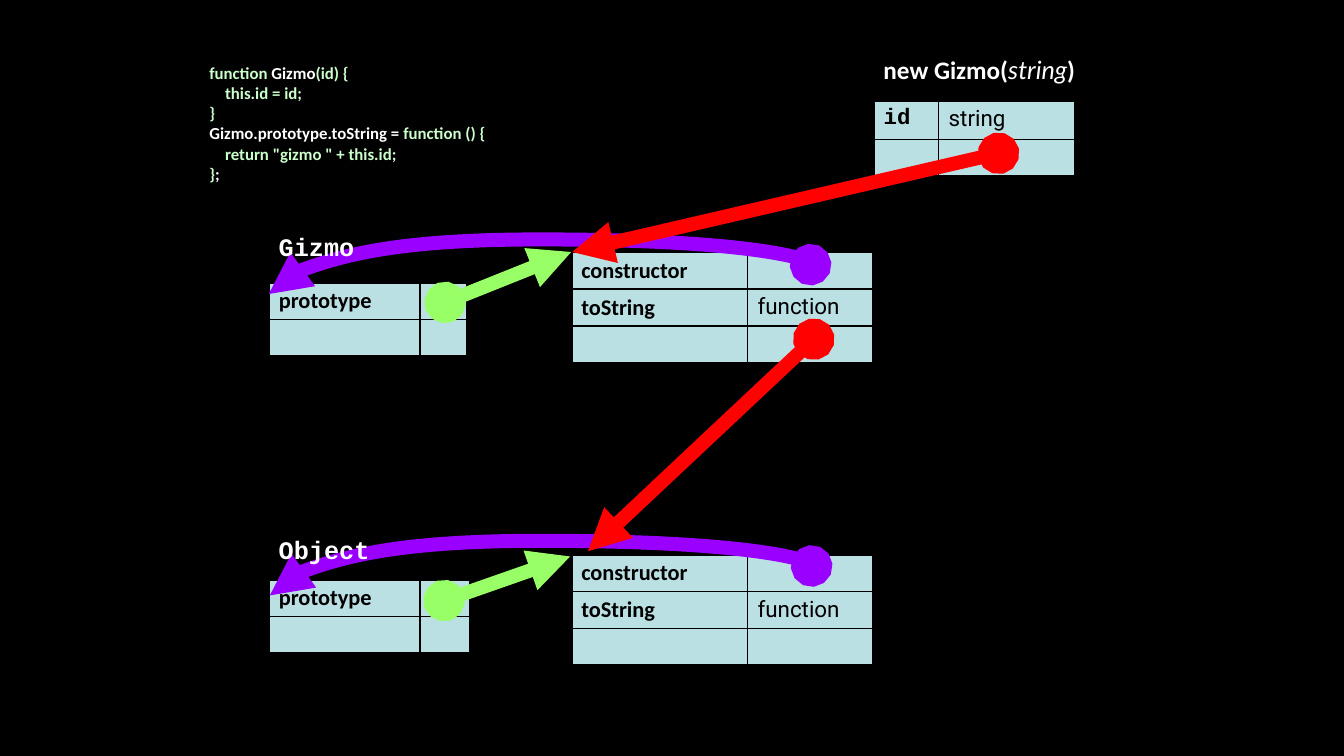
from dataclasses import dataclass

from lxml.etree import SubElement
from pptx import Presentation
from pptx.dml.color import RGBColor
from pptx.enum.shapes import MSO_CONNECTOR
from pptx.enum.text import MSO_AUTO_SIZE
from pptx.oxml.ns import qn
from pptx.slide import Slide
from pptx.table import _Cell
from pptx.text.text import TextFrame
from pptx.util import Emu, Pt

BLACK, WHITE, MINT, CELL_BLUE = "000000", "FFFFFF", "CCFFCC", "BBE0E3"
GREEN, PURPLE, RED = "99FF66", "9900FF", "FF0101"
BODY, MONO, VALUE, ITALIC = "Calibri", "Courier New", "Roboto", "Lato"


@dataclass(frozen=True)
class Record:
    left: int
    top: int
    columns: tuple[int, int]
    rows: tuple[tuple[str, str], ...]
    key_font: str = BODY
    first_height: int = 35


@dataclass(frozen=True)
class Run:
    text: str
    color: str = WHITE
    font: str = BODY
    italic: bool = False


@dataclass(frozen=True)
class Line:
    runs: tuple[Run, ...]
    indent: int = 0


@dataclass(frozen=True)
class Caption:
    left: int
    top: int
    width: int
    height: int
    size: int
    lines: tuple[Line, ...]
    wrap: bool = False


@dataclass(frozen=True)
class Pointer:
    start: tuple[int, int]
    end: tuple[int, int]
    color: str
    rise: int = 0


def px(length: float) -> Emu:
    return Emu(round(length * 9525))


def rgb(value: str) -> RGBColor:
    return RGBColor.from_string(value)


def add_border(cell: _Cell, side: str, width: float) -> None:
    properties = cell._tc.get_or_add_tcPr()
    edge = SubElement(properties, qn(f"a:ln{side}"), w=str(Pt(width)))
    fill = SubElement(edge, qn("a:solidFill"))
    SubElement(fill, qn("a:srgbClr"), val=BLACK)


def draw_record(slide: Slide, record: Record) -> None:
    heights = [record.first_height] + [35] * (len(record.rows) - 1)
    frame = slide.shapes.add_table(
        len(record.rows), 2, px(record.left), px(record.top),
        px(sum(record.columns)), px(sum(heights)))
    table = frame.table
    table.first_row = table.horz_banding = False
    for column, width in zip(table.columns, record.columns):
        column.width = px(width)
    last = len(heights) - 1
    for r, (height, texts) in enumerate(zip(heights, record.rows)):
        table.rows[r].height = px(height)
        for c, text in enumerate(texts):
            cell = table.cell(r, c)
            outer = {"L": c == 0, "R": c == 1, "T": r == 0, "B": r == last}
            for side, is_outer in outer.items():
                add_border(cell, side, 2.25 if is_outer else 1)
            cell.fill.solid()
            cell.fill.fore_color.rgb = rgb(CELL_BLUE)
            paragraph = cell.text_frame.paragraphs[0]
            paragraph.text = text
            paragraph.font.size = Pt(16)
            paragraph.font.name = VALUE if c else record.key_font
            paragraph.font.bold = c == 0
            paragraph.font.color.rgb = rgb(BLACK)
            if text:
                paragraph.space_before = Pt(3.2)


def write_line(frame: TextFrame, index: int, line: Line, size: int) -> None:
    paragraph = frame.add_paragraph() if index else frame.paragraphs[0]
    paragraph.font.size = Pt(size)
    if line.indent:
        paragraph._p.get_or_add_pPr().set("marL", str(px(line.indent)))
    for part in line.runs:
        run = paragraph.add_run()
        run.text = part.text
        run.font.name = part.font
        run.font.bold = not part.italic
        run.font.italic = part.italic
        run.font.color.rgb = rgb(part.color)


def draw_caption(slide: Slide, caption: Caption) -> None:
    box = slide.shapes.add_textbox(px(caption.left), px(caption.top),
                                   px(caption.width), px(caption.height))
    box.text_frame.word_wrap = caption.wrap
    box.text_frame.auto_size = MSO_AUTO_SIZE.SHAPE_TO_FIT_TEXT
    for index, line in enumerate(caption.lines):
        write_line(box.text_frame, index, line, caption.size)


def draw_pointer(slide: Slide, pointer: Pointer) -> None:
    (x1, y1), (x2, y2) = pointer.start, pointer.end
    kind = MSO_CONNECTOR.STRAIGHT
    drop, span = y2 - y1, x1 - x2
    if pointer.rise:
        kind = MSO_CONNECTOR.CURVE
        middle_x, middle_y = (x1 + x2) / 2, (y1 + y2) / 2
        x1, x2 = middle_x + drop / 2, middle_x - drop / 2
        y1, y2 = middle_y + span / 2, middle_y - span / 2
    connector = slide.shapes.add_connector(kind, px(x1), px(y1), px(x2), px(y2))
    connector.line.width = Pt(10)
    connector.line.color.rgb = rgb(pointer.color)
    properties = connector._element.spPr
    if pointer.rise:
        properties.find(qn("a:xfrm")).set("rot", "16200000")
        geometry = properties.find(qn("a:prstGeom"))
        guides = geometry.find(qn("a:avLst"))
        if guides is None:
            guides = SubElement(geometry, qn("a:avLst"))
        bend = round(-100000 * pointer.rise / drop)
        SubElement(guides, qn("a:gd"), name="adj1", fmla=f"val {bend}")
    outline = properties.find(qn("a:ln"))
    SubElement(outline, qn("a:headEnd"), type="oval")
    SubElement(outline, qn("a:tailEnd"), type="triangle")
    SubElement(properties, qn("a:effectLst"))


FUNCTION_ROWS = (("prototype", ""), ("", ""))
PROTOTYPE_ROWS = (("constructor", ""), ("toString", "function"), ("", ""))

CODE = Caption(190, 55, 816, 126, 12, (
    Line((Run("function ", MINT), Run("Gizmo"), Run("(id) {", MINT))),
    Line((Run("this.id = id;", MINT),), 15),
    Line((Run("}", MINT),)),
    Line((Run("Gizmo.prototype.toString = "), Run("function () {", MINT))),
    Line((Run('return "gizmo " + this.id;', MINT),), 15),
    Line((Run("}", MINT), Run(";"))),
), wrap=True)
RECORDS = (
    Record(256, 269, (144, 45), FUNCTION_ROWS),
    Record(832, 96, (62, 130), (("id", "string"), ("", "")), MONO, 37),
    Record(544, 528, (168, 120), PROTOTYPE_ROWS),
    Record(256, 552, (144, 48), FUNCTION_ROWS),
    Record(544, 240, (168, 120), PROTOTYPE_ROWS),
)
INSTANCE_TITLE = Caption(832, 47, 212, 38, 18, (
    Line((Run("new Gizmo("), Run("string", font=ITALIC, italic=True), Run(")"))),))
GIZMO_TITLE = Caption(256, 216, 91, 38, 18, (Line((Run("Gizmo", font=MONO),)),))
OBJECT_TITLE = Caption(256, 504, 106, 38, 18, (Line((Run("Object", font=MONO),)),))
MEMBER_POINTERS = (
    Pointer((424, 288), (544, 240), GREEN),
    Pointer((423, 572), (543, 530), GREEN),
    Pointer((772, 252), (256, 280), PURPLE, 24),
    Pointer((773, 539), (257, 567), PURPLE, 24),
)
GIZMO_LINK = Pointer((951, 146), (545, 240), RED)
OBJECT_LINK = Pointer((775, 323), (560, 525), RED)


def main() -> None:
    deck = Presentation()
    deck.slide_width, deck.slide_height = px(1280), px(720)
    slide = deck.slides.add_slide(deck.slide_layouts[6])
    slide.background.fill.solid()
    slide.background.fill.fore_color.rgb = rgb(BLACK)
    draw_caption(slide, CODE)
    for record in RECORDS:
        draw_record(slide, record)
    draw_caption(slide, INSTANCE_TITLE)
    for pointer in MEMBER_POINTERS:
        draw_pointer(slide, pointer)
    draw_caption(slide, GIZMO_TITLE)
    draw_pointer(slide, GIZMO_LINK)
    draw_caption(slide, OBJECT_TITLE)
    draw_pointer(slide, OBJECT_LINK)
    deck.save("out.pptx")


if __name__ == "__main__":
    main()
